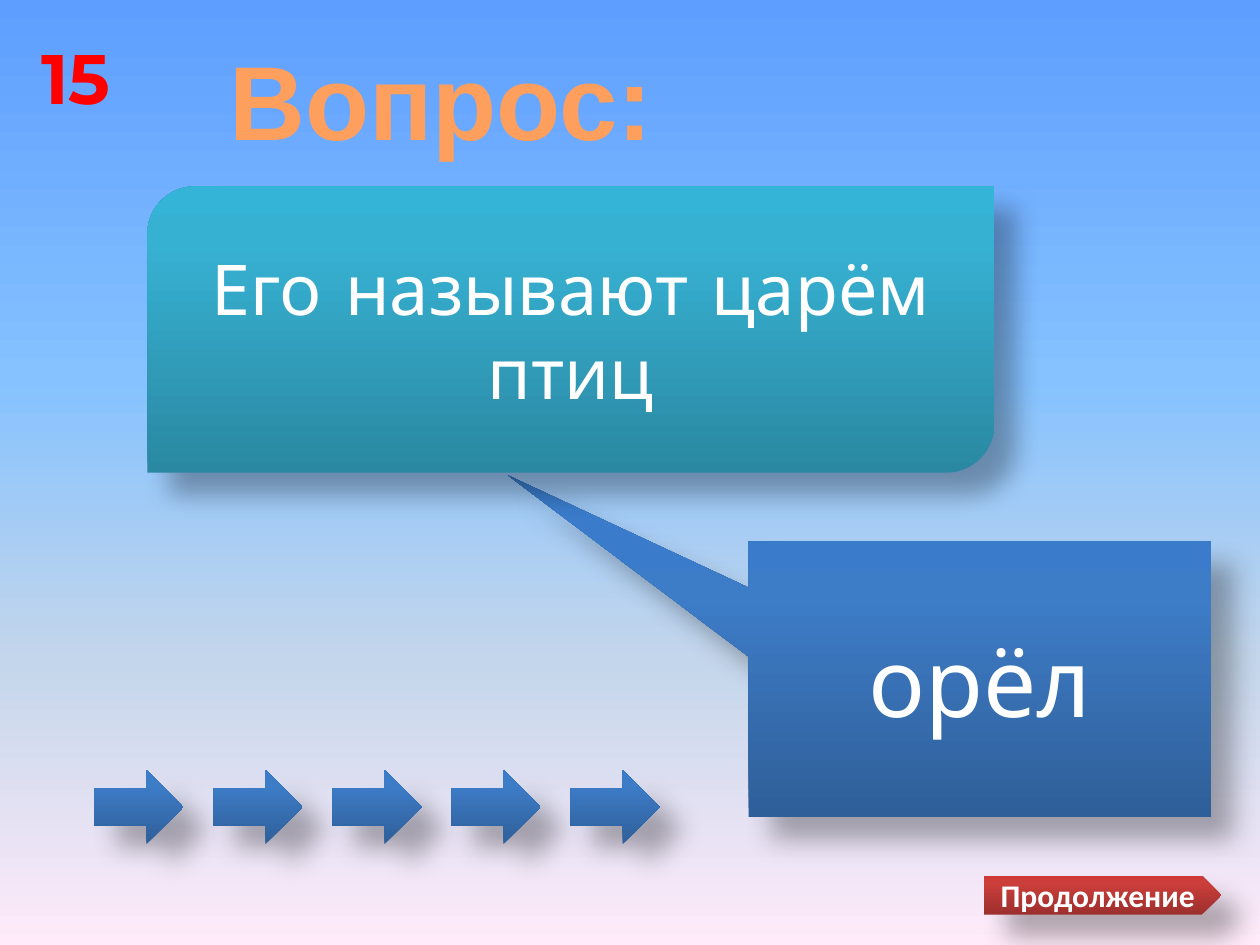
from lxml.etree import SubElement
from pptx import Presentation
from pptx.dml.color import RGBColor
from pptx.enum.shapes import MSO_SHAPE
from pptx.enum.text import MSO_ANCHOR, MSO_AUTO_SIZE, PP_ALIGN
from pptx.oxml import parse_xml
from pptx.oxml.ns import nsdecls, qn
from pptx.util import Cm, Pt

SKY = [(0, "5E9EFF"), (40, "85C2FF"), (70, "C4D6EB"), (100, "FFEBFA")]
BLUE = [(0, "2F5F99"), (80, "3D7CC7"), (100, "3A7CCB")]
TEAL = [(0, "2A88A2"), (80, "37B1D2"), (100, "34B4D6")]
RED = [(0, "9C2F2D"), (80, "CB3E3A"), (100, "CE3B37")]
ORANGE = [(0, "FFA367"), (25, "FF9F5D"), (50, "F38E3A"), (75, "FF9F5D"), (100, "FFA367")]

SCORE = ("15", (0.58, 0.58, 2.41, 1.96))
TITLE = ("Вопрос:", (4.37, 0.58, 9.14, 2.82))
ARROW_COUNT, ARROW_PITCH = 5, 2.4
ARROW_LEFT, ARROW_TOP, ARROW_WIDTH, ARROW_HEIGHT = 1.9, 15.52, 1.8, 1.5
CALLOUT_TIP = (-1.02, -0.74)
PANELS = [
    ("орёл", MSO_SHAPE.RECTANGULAR_CALLOUT, (15.09, 10.92, 9.32, 5.56),
     BLUE, "Comic Neue", 54, False, CALLOUT_TIP),
    ("Его называют царём птиц", MSO_SHAPE.ROUND_2_DIAG_RECTANGLE, (2.97, 3.76, 17.07, 5.77),
     TEAL, "Comic Neue", 40, False, ()),
    ("Продолжение", MSO_SHAPE.PENTAGON, (19.84, 17.65, 4.78, 0.79),
     RED, "Calibri", 18, True, ()),
]


def color(value):
    return RGBColor.from_string(value)


def set_gradient(fill, element, stops, angle):
    fill.gradient()
    fill.gradient_angle = angle
    stop_list = next(element.iter(qn("a:gsLst")))
    for old_stop in list(stop_list):
        stop_list.remove(old_stop)
    for position, value in stops:
        stop = SubElement(stop_list, qn("a:gs"), pos=str(position * 1000))
        SubElement(stop, qn("a:srgbClr"), val=value)


def add_shadow(shape):
    shape.shadow.inherit = False
    effects = shape._element.spPr.find(qn("a:effectLst"))
    effects.append(parse_xml(
        f'<a:outerShdw {nsdecls("a")} blurRad="{Pt(15)}" dist="{Pt(18)}" dir="2700000" '
        'algn="tl" rotWithShape="0"><a:srgbClr val="000000"><a:alpha val="30000"/>'
        '</a:srgbClr></a:outerShdw>'))


def add_block(slide, kind, box, stops):
    block = slide.shapes.add_shape(kind, *map(Cm, box))
    set_gradient(block.fill, block._element.spPr, stops, 90)
    block.line.fill.background()
    add_shadow(block)
    return block


def style_font(font, name, size, bold):
    font.name, font.size, font.bold = name, Pt(size), bold


def add_panel(slide, text, kind, box, stops, font_name, size, bold, adjustments):
    panel = add_block(slide, kind, box, stops)
    for index, value in enumerate(adjustments):
        panel.adjustments[index] = value
    frame = panel.text_frame
    frame.text = text
    frame.vertical_anchor = MSO_ANCHOR.MIDDLE
    paragraph = frame.paragraphs[0]
    paragraph.alignment = PP_ALIGN.CENTER
    style_font(paragraph.font, font_name, size, bold)
    paragraph.font.color.rgb = color("FFFFFF")


def write_heading(holder, text, box, font_name, size):
    holder.left, holder.top, holder.width, holder.height = map(Cm, box)
    frame = holder.text_frame
    frame.text = text
    frame.word_wrap = False
    frame.auto_size = MSO_AUTO_SIZE.SHAPE_TO_FIT_TEXT
    frame.vertical_anchor = MSO_ANCHOR.TOP
    frame.paragraphs[0].alignment = PP_ALIGN.LEFT
    run = frame.paragraphs[0].runs[0]
    style_font(run.font, font_name, size, True)
    return run


def main():
    """Build the quiz question slide."""
    deck = Presentation()
    deck.slide_width, deck.slide_height = Cm(25.4), Cm(19.05)
    slide = deck.slides.add_slide(deck.slide_layouts[5])
    set_gradient(slide.background.fill, slide._element, SKY, 270)

    title = write_heading(slide.shapes.title, *TITLE, "Arial", 60)
    set_gradient(title.font.fill, title._r, ORANGE, 270)

    score = write_heading(slide.shapes.add_textbox(0, 0, 0, 0), *SCORE, "Montserrat", 40)
    score.font.color.rgb = color("FF0000")
    score._r.get_or_add_rPr().insert(0, parse_xml(
        f'<a:ln {nsdecls("a")} w="{Pt(1.45)}"><a:solidFill><a:srgbClr val="FFFFFF"/>'
        '</a:solidFill></a:ln>'))

    for index in range(ARROW_COUNT):
        left = ARROW_LEFT + index * ARROW_PITCH
        add_block(slide, MSO_SHAPE.RIGHT_ARROW,
                  (left, ARROW_TOP, ARROW_WIDTH, ARROW_HEIGHT), BLUE)
    for panel in PANELS:
        add_panel(slide, *panel)

    deck.save("out.pptx")


if __name__ == "__main__":
    main()
